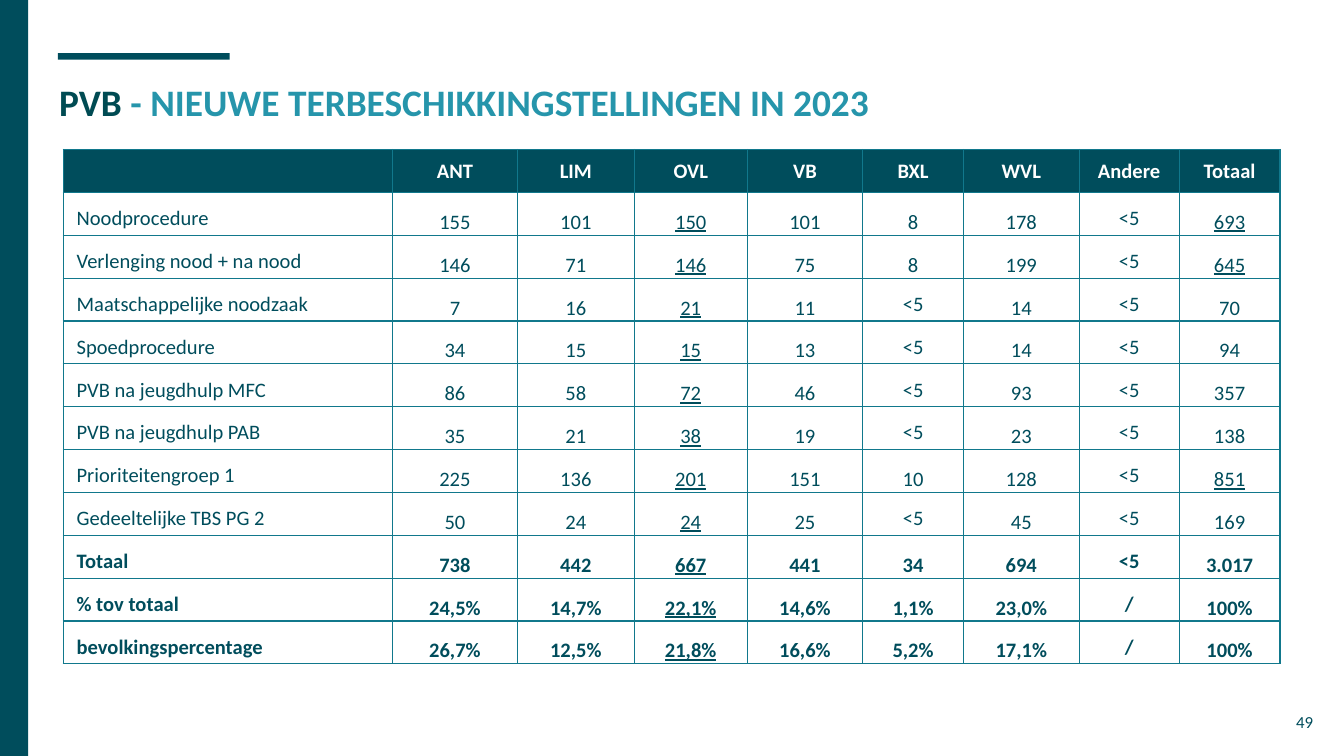
import pptx
import pptx.dml.color
import pptx.enum.shapes
import pptx.enum.text
import pptx.oxml
import pptx.oxml.ns
import pptx.util

ALIGN = pptx.enum.text.PP_ALIGN
ANCHOR = pptx.enum.text.MSO_ANCHOR
TEAL, DARK, BLUE, BORDER, WHITE = "004D5C", "004B53", "2695AB", "11788C", "FFFFFF"

SLIDE_WIDTH = 10
SLIDE_HEIGHT = SLIDE_WIDTH * 9 / 16
GRID_COLUMNS = 100
GRID_ROWS = GRID_COLUMNS * 9 / 16

COLUMN_WIDTHS = [24.5, 9.3, 8.7, 8.4, 8.6, 7.5, 8.6, 7.45, 7.5]
HEADER = ["", "ANT", "LIM", "OVL", "VB", "BXL", "WVL", "Andere", "Totaal"]
ROWS = [
    ["Noodprocedure", "155", "101", "150", "101", "8", "178", "<5", "693"],
    ["Verlenging nood + na nood", "146", "71", "146", "75", "8", "199", "<5", "645"],
    ["Maatschappelijke noodzaak", "7", "16", "21", "11", "<5", "14", "<5", "70"],
    ["Spoedprocedure", "34", "15", "15", "13", "<5", "14", "<5", "94"],
    ["PVB na jeugdhulp MFC", "86", "58", "72", "46", "<5", "93", "<5", "357"],
    ["PVB na jeugdhulp PAB", "35", "21", "38", "19", "<5", "23", "<5", "138"],
    ["Prioriteitengroep 1", "225", "136", "201", "151", "10", "128", "<5", "851"],
    ["Gedeeltelijke TBS PG 2", "50", "24", "24", "25", "<5", "45", "<5", "169"],
    ["Totaal", "738", "442", "667", "441", "34", "694", "<5", "3.017"],
    ["% tov totaal", "24,5%", "14,7%", "22,1%", "14,6%", "1,1%", "23,0%", "/", "100%"],
    ["bevolkingspercentage", "26,7%", "12,5%", "21,8%", "16,6%", "5,2%", "17,1%", "/", "100%"],
]
FIRST_SUMMARY_ROW = 9
UNDERLINED_COLUMN = HEADER.index("OVL")
UNDERLINED_TOTALS = {"693", "645", "851"}


def rgb(color):
    return pptx.dml.color.RGBColor.from_string(color)


def apply(target, values):
    for name, value in values.items():
        setattr(target, name, value)


class Deck:
    """Style and current slide; lengths are in square units of the slide grid."""

    font = "Calibri"

    def __init__(self, width, height):
        self.prs = pptx.Presentation()
        self.unit = width / GRID_COLUMNS
        apply(self.prs, {"slide_width": pptx.util.Inches(width),
                         "slide_height": pptx.util.Inches(height)})
        self.s = self.prs.slides.add_slide(self.prs.slide_layouts[5])

    def length(self, units):
        return pptx.util.Inches(units * self.unit)

    def box(self, *units):
        return [self.length(u) for u in units]

    def run(self, p, text, color, **font):
        r = p.add_run()
        r.text = text
        apply(r.font, {"name": self.font, **font})
        r.font.color.rgb = rgb(color)

    def margins(self, target, top, bottom):
        apply(target, {"margin_left": self.length(1), "margin_right": self.length(1),
                       "margin_top": self.length(top), "margin_bottom": self.length(bottom)})

    def bar(self, *at):
        sp = self.s.shapes.add_shape(pptx.enum.shapes.MSO_SHAPE.RECTANGLE, *self.box(*at))
        sp.shadow.inherit = False
        sp.fill.solid()
        sp.fill.fore_color.rgb = rgb(TEAL)
        sp.line.fill.background()

    def text(self, sp, parts, size, align, **font):
        tf = sp.text_frame
        apply(tf, {"word_wrap": True, "vertical_anchor": ANCHOR.TOP,
                   "auto_size": pptx.enum.text.MSO_AUTO_SIZE.NONE})
        self.margins(tf, 1, 1)
        p = tf.paragraphs[0]
        p.alignment = align
        for text, color in parts:
            self.run(p, text, color, size=pptx.util.Pt(size), **font)

    def title(self, parts, *at):
        sp = self.s.shapes.title
        apply(sp, dict(zip(("left", "top", "width", "height"), self.box(*at))))
        self.text(sp, parts, 20, ALIGN.LEFT, bold=True)

    def page_number(self, number, *at):
        sp = self.s.shapes.add_textbox(*self.box(*at))
        self.text(sp, [(number, TEAL)], 9, ALIGN.RIGHT)

    def borders(self, cell):
        tc_pr = cell._tc.get_or_add_tcPr()
        for i, side in enumerate(("lnL", "lnR", "lnT", "lnB")):
            tc_pr.insert(i, pptx.oxml.parse_xml(
                f'<a:{side} {pptx.oxml.ns.nsdecls("a")} w="{pptx.util.Pt(0.75)}">'
                f'<a:solidFill><a:srgbClr val="{BORDER}"/></a:solidFill></a:{side}>'))

    def cell(self, cell, text, row, column):
        header = row == 0
        self.margins(cell, 0 if header else 1, 0)
        cell.vertical_anchor = ANCHOR.MIDDLE if header else ANCHOR.TOP
        if header:
            cell.fill.solid()
            cell.fill.fore_color.rgb = rgb(TEAL)
        else:
            cell.fill.background()
        self.borders(cell)
        if not text:
            return
        p = cell.text_frame.paragraphs[0]
        p.alignment = ALIGN.CENTER if column else ALIGN.LEFT
        if not header and column and text not in ("<5", "/"):
            p.line_spacing = 1.15
        underline = not header and (column == UNDERLINED_COLUMN or text in UNDERLINED_TOTALS)
        self.run(p, text, WHITE if header else TEAL, size=pptx.util.Pt(11),
                 bold=header or row >= FIRST_SUMMARY_ROW, underline=underline)

    def table(self, rows, widths, row_height, left, top):
        at = self.box(left, top, sum(widths), row_height * len(rows))
        table = self.s.shapes.add_table(len(rows), len(widths), *at).table
        table.horz_banding = False
        for column, width in zip(table.columns, widths):
            column.width = self.length(width)
        for i, values in enumerate(rows):
            table.rows[i].height = self.length(row_height)
            for j, value in enumerate(values):
                self.cell(table.cell(i, j), value, i, j)


def main():
    deck = Deck(SLIDE_WIDTH, SLIDE_HEIGHT)
    deck.bar(4.3, 3.95, 12.8, 0.5)
    deck.bar(0, 0, 2.1, GRID_ROWS)
    deck.title([("PVB ", DARK), ("- NIEUWE TERBESCHIKKINGSTELLINGEN IN 2023", BLUE)],
               3.4, 4.9, 93.2, 6.3)
    deck.page_number("49", 92.7, 51.95, 6, 4.3)
    deck.table([HEADER] + ROWS, COLUMN_WIDTHS, 3.19, 4.7, 11.13)
    deck.prs.save("out.pptx")


if __name__ == "__main__":
    main()
